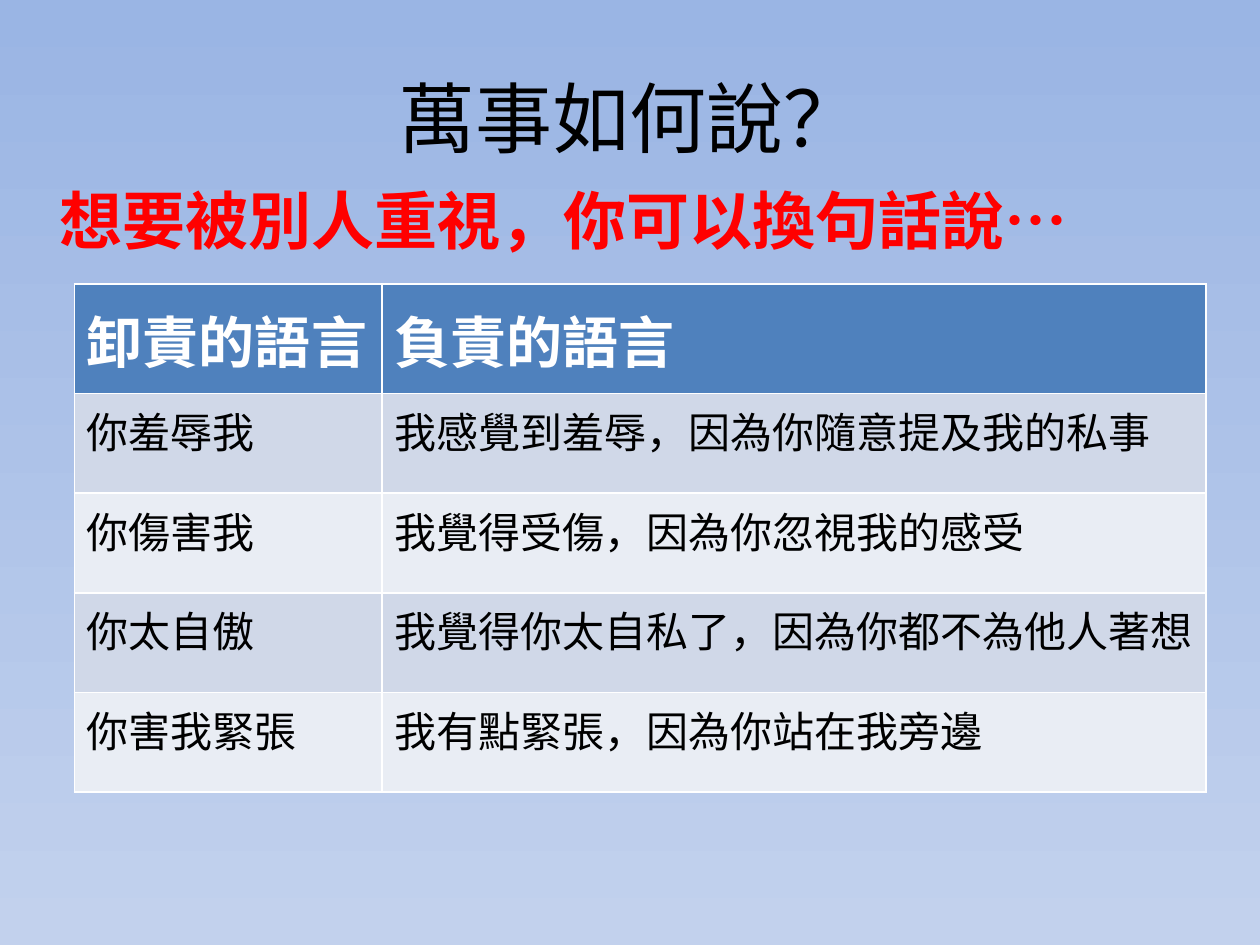
from dataclasses import dataclass

from lxml import etree
from pptx import Presentation
from pptx.dml.color import RGBColor
from pptx.enum import text
from pptx.oxml.ns import qn
from pptx.util import Pt


@dataclass(frozen=True)
class Theme:
    face: str = "Noto Sans CJK SC"
    sky: tuple = ("9AB5E4", "C2D1ED")
    ink: str = "000000"
    alert: str = "FF0000"
    white: str = "FFFFFF"
    head: str = "4F81BD"
    bands: tuple = ("D0D8E8", "E9EDF4")
    title: int = 44
    lead: int = 36
    label: int = 32
    cell: int = 24


THEME = Theme()
ROWS = [
    ("卸責的語言", "負責的語言"),
    ("你羞辱我", "我感覺到羞辱，因為你隨意提及我的私事"),
    ("你傷害我", "我覺得受傷，因為你忽視我的感受"),
    ("你太自傲", "我覺得你太自私了，因為你都不為他人著想"),
    ("你害我緊張", "我有點緊張，因為你站在我旁邊"),
]


def style(para, size, color, bold=False):
    font = para.font
    font.size, font.bold, font.name = Pt(size), bold, THEME.face
    font.color.rgb = RGBColor.from_string(color)
    # East Asian text takes its face from a:ea
    props = para._p.pPr.find(qn("a:defRPr"))
    etree.SubElement(props, qn("a:ea"), typeface=THEME.face)


def place(shape, box):
    shape.left, shape.top, shape.width, shape.height = map(Pt, box)


def paint(slide):
    fill = slide.background.fill
    fill.gradient()
    fill.gradient_angle = 270
    for stop, color in zip(fill.gradient_stops, THEME.sky):
        stop.color.rgb = RGBColor.from_string(color)


def add_title(slide, box, words):
    title = slide.shapes.title
    place(title, box)
    frame = title.text_frame
    frame.text = words
    frame.vertical_anchor = text.MSO_ANCHOR.MIDDLE
    para = frame.paragraphs[0]
    para.alignment = text.PP_ALIGN.CENTER
    style(para, THEME.title, THEME.ink)


def add_lead(slide, box, words):
    body = slide.placeholders[1]
    place(body, box)
    body.text_frame.text = words
    para = body.text_frame.paragraphs[0]
    para.space_before = Pt(0)
    props = para._p.get_or_add_pPr()
    props.set("marL", "0")
    props.set("indent", "0")
    etree.SubElement(props, qn("a:buNone"))
    style(para, THEME.lead, THEME.alert, True)


def add_grid(slide, box, rows, first, top):
    """Table whose first column and header row have the given sizes."""
    wide, high = box[2:]
    grid = slide.shapes.add_table(len(rows), 2, *map(Pt, box)).table
    for col, width in zip(grid.columns, (first, wide - first)):
        col.width = Pt(width)
    for i, words in enumerate(rows):
        head = i == 0
        grid.rows[i].height = Pt(top if head else (high - top) / (len(rows) - 1))
        shade = THEME.head if head else THEME.bands[(i - 1) % 2]
        for cell, word in zip(grid.rows[i].cells, words):
            cell.text = word
            cell.fill.solid()
            cell.fill.fore_color.rgb = RGBColor.from_string(shade)
            para = cell.text_frame.paragraphs[0]
            if head:
                cell.vertical_anchor = text.MSO_ANCHOR.MIDDLE
                style(para, THEME.label, THEME.white, True)
            else:
                style(para, THEME.cell, THEME.ink)


def main():
    deck = Presentation()
    deck.slide_width, deck.slide_height = Pt(720), Pt(540)
    slide = deck.slides.add_slide(deck.slide_layouts[1])
    paint(slide)
    add_title(slide, (36, 21.6, 648, 90), "萬事如何說？")
    add_lead(slide, (26.6, 100, 662.4, 356.4), "想要被別人重視，你可以換句話說…")
    add_grid(slide, (42.5, 162.2, 646.7, 290.6), ROWS, first=175.7, top=62.6)
    deck.save("out.pptx")


if __name__ == "__main__":
    main()
